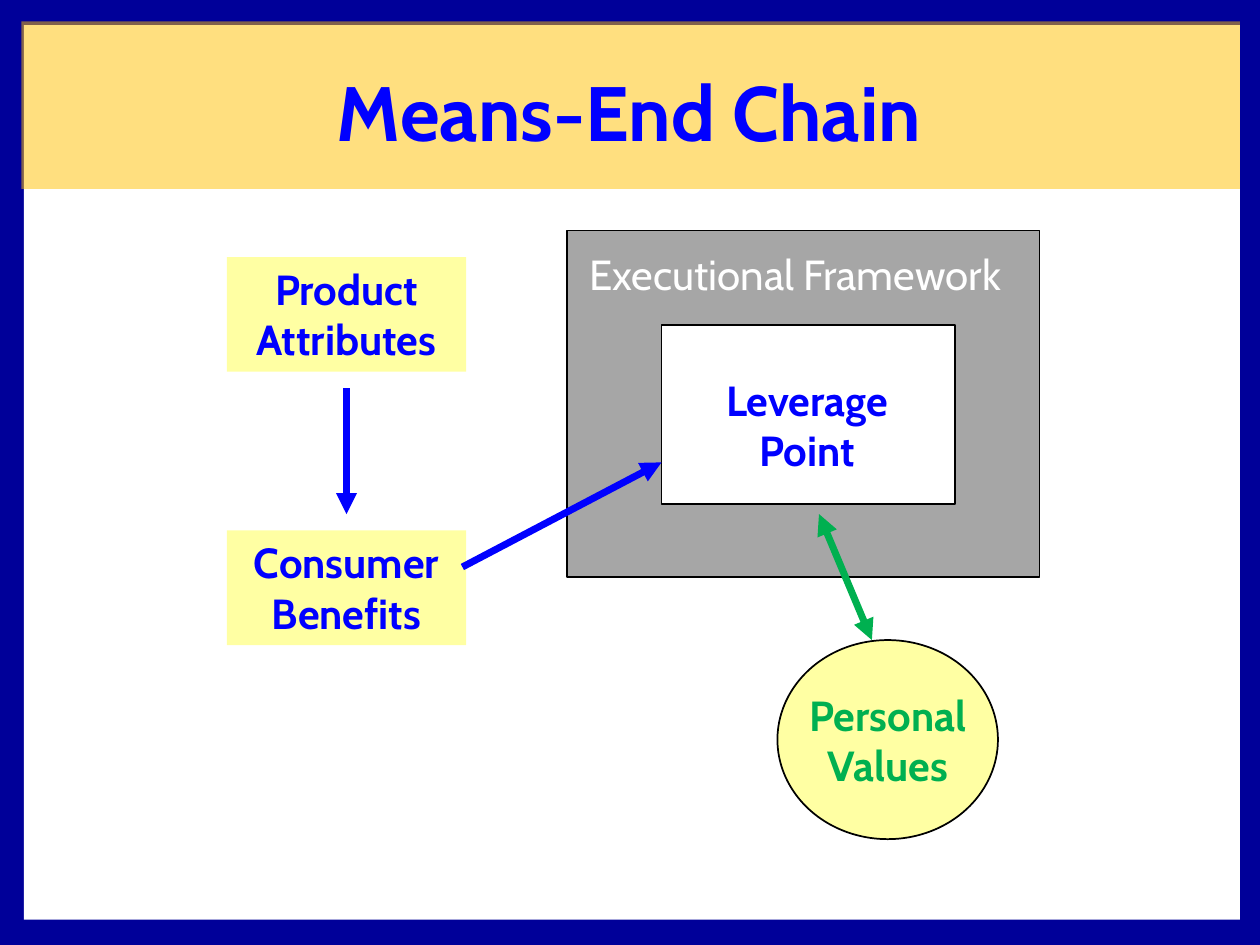
from lxml import etree
from pptx import Presentation
from pptx.dml.color import RGBColor
from pptx.enum.shapes import MSO_CONNECTOR, MSO_SHAPE
from pptx.enum.text import MSO_ANCHOR, PP_ALIGN
from pptx.oxml.ns import qn
from pptx.util import Inches, Pt

RECT, OVAL = MSO_SHAPE.RECTANGLE, MSO_SHAPE.OVAL
LINE = MSO_CONNECTOR.STRAIGHT
LEFT, CENTER = PP_ALIGN.LEFT, PP_ALIGN.CENTER
TOP, MIDDLE = MSO_ANCHOR.TOP, MSO_ANCHOR.MIDDLE
NAVY = RGBColor(0x00, 0x00, 0x99)
BLUE = RGBColor(0x00, 0x00, 0xFF)
GREEN = RGBColor(0x00, 0xB0, 0x50)
GOLD = RGBColor(0xFF, 0xC0, 0x00)
YELLOW = RGBColor(0xFF, 0xFF, 0x00)
GRAY = RGBColor(0xA6, 0xA6, 0xA6)
WHITE = RGBColor(0xFF, 0xFF, 0xFF)
BLACK = RGBColor(0x00, 0x00, 0x00)


class Board:
    """Holds the text style and the slide being drawn."""

    font = "Cabin"
    size = 24

    def __init__(self, slide):
        self.slide = slide

    def shape(self, kind, box, fill, alpha=100, edge=None):
        item = self.slide.shapes.add_shape(kind, *map(Inches, box))
        item.shadow.inherit = False
        item.fill.solid()
        item.fill.fore_color.rgb = fill
        if alpha < 100:
            color = item._element.spPr.find(qn("a:solidFill"))[0]
            etree.SubElement(color, qn("a:alpha"), val=str(alpha * 1000))
        if edge is None:
            item.line.fill.background()
        else:
            item.line.color.rgb = edge
            item.line.width = Pt(1)
        return item

    def letter(self, item, text, color, size=None, bold=True,
               align=CENTER, anchor=TOP, wrap=False):
        frame = item.text_frame
        frame.text = text
        frame.word_wrap = wrap
        frame.vertical_anchor = anchor
        for para in frame.paragraphs:
            para.alignment = align
            for run in para.runs:
                run.font.name = self.font
                run.font.size = Pt(size or self.size)
                run.font.bold = bold
                run.font.color.rgb = color

    def label(self, box, text, color, **style):
        item = self.slide.shapes.add_textbox(*map(Inches, box))
        self.letter(item, text, color, **style)

    def arrow(self, start, end, color, both=False):
        item = self.slide.shapes.add_connector(LINE, *map(Inches, start + end))
        item.line.color.rgb = color
        item.line.width = Pt(4)
        props = item._element.spPr
        stroke = props.find(qn("a:ln"))
        for tag in ("a:headEnd", "a:tailEnd") if both else ("a:tailEnd",):
            etree.SubElement(stroke, qn(tag), type="triangle")
        etree.SubElement(props, qn("a:effectLst"))


def main():
    deck = Presentation()
    deck.slide_width, deck.slide_height = Inches(10), Inches(7.5)
    board = Board(deck.slides.add_slide(deck.slide_layouts[6]))

    board.shape(RECT, (0, -0.07, 10, 7.58), NAVY)
    board.shape(RECT, (0.19, 0.2, 9.65, 7.1), WHITE)
    board.shape(RECT, (0.17, 0.17, 9.67, 1.33), GOLD, alpha=50)
    board.label((0.33, 0.25, 9.33, 1.25), "Means-End Chain", BLUE,
                size=44, anchor=MIDDLE, wrap=True)

    board.shape(RECT, (4.5, 1.83, 3.75, 2.75), GRAY, edge=BLACK)
    for top, text in ((2.04, "Product\nAttributes"),
                      (4.21, "Consumer\nBenefits")):
        card = board.shape(RECT, (1.8, top, 1.9, 0.91), YELLOW, alpha=36)
        board.letter(card, text, BLUE)
    board.shape(RECT, (5.25, 2.58, 2.33, 1.42), WHITE, edge=BLACK)
    board.label((5.53, 2.92, 1.75, 0.91), "Leverage\nPoint", BLUE)
    values = board.shape(OVAL, (6.17, 5.08, 1.75, 1.58), YELLOW,
                         alpha=36, edge=BLACK)
    board.letter(values, "Personal\nValues", GREEN, anchor=MIDDLE)

    board.arrow((6.5, 4.08), (6.92, 5.08), GREEN, both=True)
    board.arrow((3.67, 4.5), (5.25, 3.67), BLUE)
    board.arrow((2.75, 3.08), (2.75, 4.08), BLUE)
    board.label((4.58, 1.92, 3.64, 0.5), "Executional Framework", WHITE,
                bold=False, align=LEFT)

    deck.save("out.pptx")


if __name__ == "__main__":
    main()
